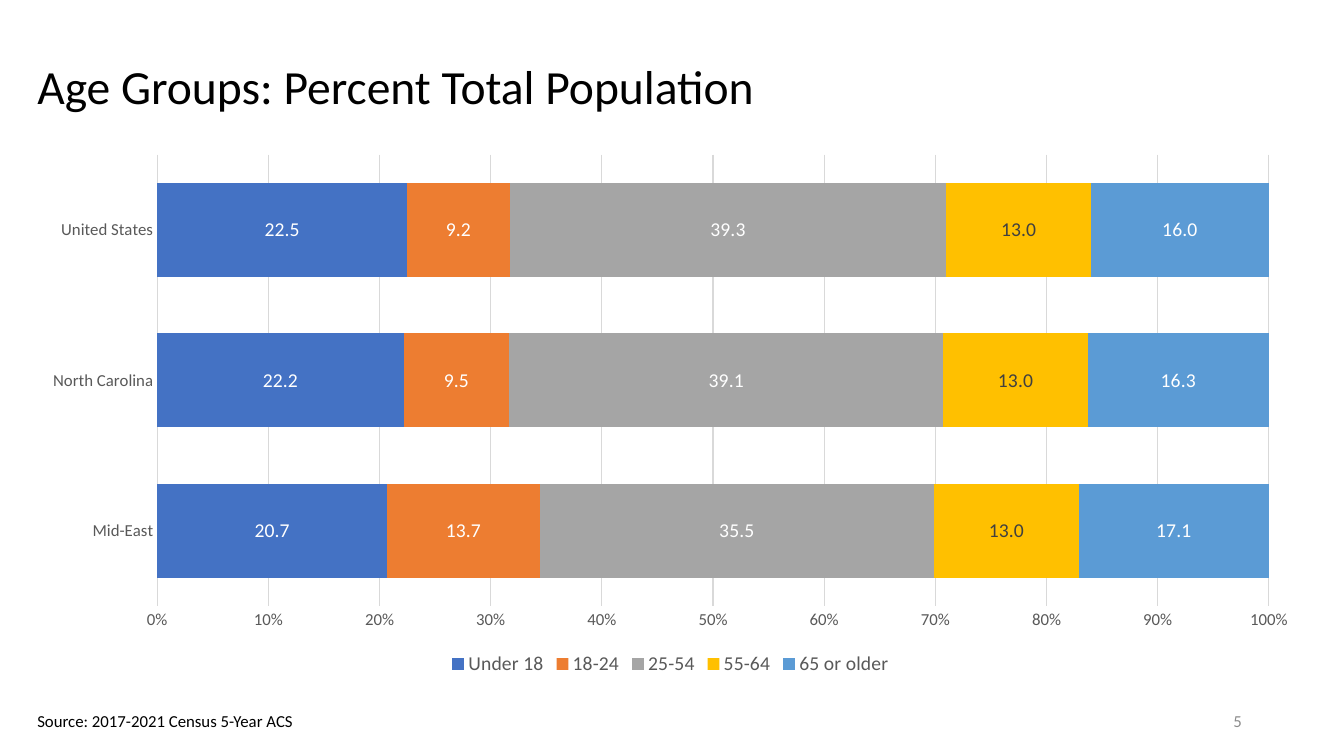
"""Build a slide with a stacked bar chart of age groups by region."""
from pptx import Presentation
from pptx.chart.data import CategoryChartData
from pptx.dml.color import RGBColor
from pptx.enum.chart import XL_CHART_TYPE, XL_LABEL_POSITION, XL_LEGEND_POSITION, XL_TICK_MARK
from pptx.enum.text import MSO_ANCHOR, PP_ALIGN
from pptx.util import Cm, Pt

COLORS = {
    "black": "000000", "page": "8C8C8C", "axis": "595959", "grid": "D9D9D9",
    "white": "FFFFFF", "dark": "404040", "blue": "4472C4", "orange": "ED7D31",
    "gray": "A5A5A5", "gold": "FFC000", "sky": "5B9BD5",
}
REGIONS = ["Mid-East", "North Carolina", "United States"]
AGE_GROUPS = [
    ("Under 18", [20.7, 22.2, 22.5], "blue", "white"),
    ("18-24", [13.7, 9.5, 9.2], "orange", "white"),
    ("25-54", [35.5, 39.1, 39.3], "gray", "white"),
    ("55-64", [13.0, 13.0, 13.0], "gold", "dark"),
    ("65 or older", [17.1, 16.3, 16.0], "sky", "white"),
]
TEXTS = [
    ("Age Groups: Percent Total Population", (0.69, 0.86, 32.41, 2.77), 34, "black",
     {"word_wrap": True, "vertical_anchor": MSO_ANCHOR.MIDDLE},
     {"line_spacing": 0.9}),
    ("5", (23.93, 17.65, 7.62, 1.02), 12, "page",
     {"word_wrap": True, "vertical_anchor": MSO_ANCHOR.MIDDLE},
     {"alignment": PP_ALIGN.RIGHT}),
    ("Source: 2017-2021 Census 5-Year ACS", (0.69, 17.78, 7.06, 0.76), 12, "black",
     {"word_wrap": False}, {}),
]


def set_values(target, values):
    for name, value in values.items():
        setattr(target, name, value)


def set_font(font, size, color):
    set_values(font, {"name": "Calibri", "size": Pt(size), "bold": False})
    font.color.rgb = RGBColor.from_string(COLORS[color])


presentation = Presentation()
set_values(presentation, {"slide_width": Cm(33.87), "slide_height": Cm(19.05)})
slide = presentation.slides.add_slide(presentation.slide_layouts[6])

for text, box, size, color, frame_format, paragraph_format in TEXTS:
    text_frame = slide.shapes.add_textbox(*map(Cm, box)).text_frame
    set_values(text_frame, frame_format)
    paragraph = text_frame.paragraphs[0]
    set_values(paragraph, paragraph_format)
    run = paragraph.add_run()
    run.text = text
    set_font(run.font, size, color)

chart_data = CategoryChartData(number_format="#,##0.0")
chart_data.categories = REGIONS
for name, values, *_ in AGE_GROUPS:
    chart_data.add_series(name, values)
chart = slide.shapes.add_chart(
    XL_CHART_TYPE.BAR_STACKED_100, Cm(0.69), Cm(3.63), Cm(32.41), Cm(13.51), chart_data
).chart
set_values(chart, {"has_title": False, "has_legend": True})
set_font(chart.font, 10, "black")
set_values(chart.legend, {"position": XL_LEGEND_POSITION.BOTTOM, "include_in_layout": False})
set_font(chart.legend.font, 14, "axis")

for axis in (chart.category_axis, chart.value_axis):
    set_values(axis, {"major_tick_mark": XL_TICK_MARK.NONE, "minor_tick_mark": XL_TICK_MARK.NONE})
    set_font(axis.tick_labels.font, 12, "axis")
chart.value_axis.has_major_gridlines = True
chart.value_axis.format.line.fill.background()
set_values(chart.value_axis.tick_labels, {"number_format": "0%", "number_format_is_linked": False})
for line in (chart.category_axis.format.line, chart.value_axis.major_gridlines.format.line):
    line.width = Pt(0.75)
    line.color.rgb = RGBColor.from_string(COLORS["grid"])

plot = chart.plots[0]
set_values(plot, {"gap_width": 60, "overlap": 100, "vary_by_categories": False})
for series, (_, _, fill_color, label_color) in zip(plot.series, AGE_GROUPS):
    series.format.fill.solid()
    series.format.fill.fore_color.rgb = RGBColor.from_string(COLORS[fill_color])
    set_values(series.data_labels, {
        "show_value": True, "number_format": "#,##0.0",
        "number_format_is_linked": False, "position": XL_LABEL_POSITION.CENTER,
    })
    set_font(series.data_labels.font, 14, label_color)

presentation.save("out.pptx")
